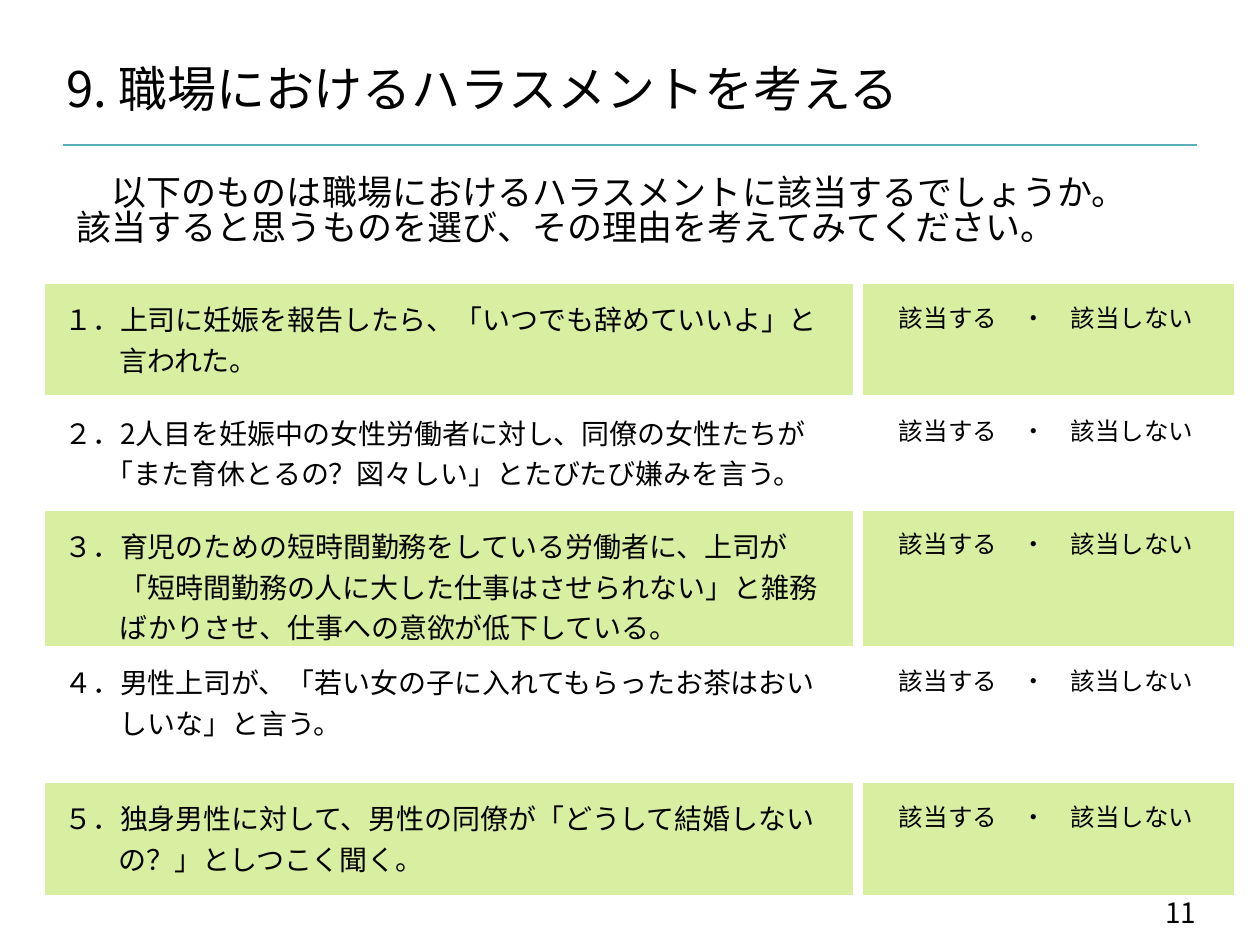
from lxml.etree import SubElement
from pptx import Presentation
from pptx.dml.color import RGBColor
from pptx.enum.shapes import MSO_CONNECTOR as Connector
from pptx.enum.text import MSO_ANCHOR as Anchor, PP_ALIGN as Align
from pptx.oxml.ns import qn
from pptx.util import Inches, Pt

FONT = "Noto Sans CJK JP"
BLACK, WHITE, TEAL, GREEN = "000000", "FFFFFF", "59B0B9", "D8EEA1"
ANSWER = "該当する　・　該当しない"

# Question, hanging indent and row height
QUESTIONS = [
    ("１．上司に妊娠を報告したら、「いつでも辞めていいよ」と言われた。", 0.44, 0.9),
    ("２．2人目を妊娠中の女性労働者に対し、同僚の女性たちが"
     "「また育休とるの？図々しい」とたびたび嫌みを言う。", 0.33, 0.9),
    ("３．育児のための短時間勤務をしている労働者に、上司が"
     "「短時間勤務の人に大した仕事はさせられない」と雑務"
     "ばかりさせ、仕事への意欲が低下している。", 0.44, 1.08),
    ("４．男性上司が、「若い女の子に入れてもらったお茶はおいしいな」と言う。", 0.44, 1.08),
    ("５．独身男性に対して、男性の同僚が「どうして結婚しないの？」としつこく聞く。", 0.43, 0.9),
]


def color(value):
    return RGBColor.from_string(value)


def write_text(frame, text, size, align=Align.LEFT, anchor=None, before=0,
               spacing=None, hanging=0):
    frame.word_wrap = True
    if anchor is not None:
        frame.vertical_anchor = anchor
    paragraph = frame.paragraphs[0]
    paragraph.alignment = align
    paragraph.space_before = Pt(before)
    if spacing:
        paragraph.line_spacing = spacing
    if hanging:
        properties = paragraph._p.get_or_add_pPr()
        properties.set("marL", str(Inches(hanging)))
        properties.set("indent", str(Inches(-hanging)))
    run = paragraph.add_run()
    run.text = text
    run.font.size = Pt(size)
    run.font.name = FONT
    run.font.color.rgb = color(BLACK)
    SubElement(run._r.get_or_add_rPr(), qn("a:ea"), typeface=FONT)


def add_text(slide, left, top, width, height, text, size, **text_format):
    box = slide.shapes.add_textbox(Inches(left), Inches(top), Inches(width), Inches(height))
    write_text(box.text_frame, text, size, **text_format)


def set_borders(cell, **widths):
    # Borders must stand before the fill, in the order left, right, top, bottom
    properties = cell._tc.get_or_add_tcPr()
    for position, (side, width) in enumerate(widths.items()):
        line = SubElement(properties, qn(f"a:ln{side}"), w=str(Pt(width)))
        fill = SubElement(line, qn("a:solidFill"))
        SubElement(fill, qn("a:srgbClr"), val=WHITE)
        properties.insert(position, line)


def add_header(slide, left, top, width, height):
    add_text(slide, left, top, width, height, "9. 職場におけるハラスメントを考える",
             28, anchor=Anchor.BOTTOM)
    # Rule below the title
    rule_left, rule_top = left + 0.07, top + 1.08
    rule = slide.shapes.add_connector(
        Connector.STRAIGHT, Inches(rule_left), Inches(rule_top),
        Inches(rule_left + width), Inches(rule_top))
    rule.line.color.rgb = color(TEAL)
    rule.line.width = Pt(0.75)
    SubElement(rule._element.spPr, qn("a:effectLst"))


def add_question_table(slide, left, top, widths):
    heights = [height for _, _, height in QUESTIONS]
    table = slide.shapes.add_table(
        len(QUESTIONS), len(widths), Inches(left), Inches(top),
        Inches(sum(widths)), Inches(sum(heights))).table
    table.first_row = table.horz_banding = False
    for column, width in zip(table.columns, widths):
        column.width = Inches(width)

    for index, (question, hanging, height) in enumerate(QUESTIONS):
        row = table.rows[index]
        row.height = Inches(height)
        question_cell, answer_cell = row.cells
        for cell, margins in ((question_cell, (0.16, 0.2)), (answer_cell, (0.1, 0.1))):
            cell.margin_left, cell.margin_right = map(Inches, margins)
            cell.margin_top, cell.margin_bottom = Inches(0.12), 0
            if index % 2 == 0:
                cell.fill.solid()
                cell.fill.fore_color.rgb = color(GREEN)
            else:
                cell.fill.background()
        bottom = 3 if index == 0 else 1
        set_borders(question_cell, L=1, R=6, T=1, B=bottom)
        set_borders(answer_cell, L=6, R=1, T=1, B=bottom)
        write_text(question_cell.text_frame, question, 16, hanging=hanging)
        write_text(answer_cell.text_frame, ANSWER, 14, align=Align.CENTER)


def main():
    presentation = Presentation()
    presentation.slide_width, presentation.slide_height = Inches(10), Inches(7.5)
    slide = presentation.slides.add_slide(presentation.slide_layouts[6])

    add_header(slide, 0.43, 0.07, 9, 0.91)
    # Instruction
    add_text(slide, 0.51, 1.36, 8.91, 0.92,
             "　以下のものは職場におけるハラスメントに該当するでしょうか。　"
             "該当すると思うものを選び、その理由を考えてみてください。",
             20, before=2, spacing=0.83)
    add_question_table(slide, 0.35, 2.25, (6.46, 2.99))
    # Page number
    add_text(slide, 8.86, 6.98, 1.02, 0.52, "11", 16,
             align=Align.CENTER, anchor=Anchor.MIDDLE)
    presentation.save("out.pptx")


if __name__ == "__main__":
    main()
